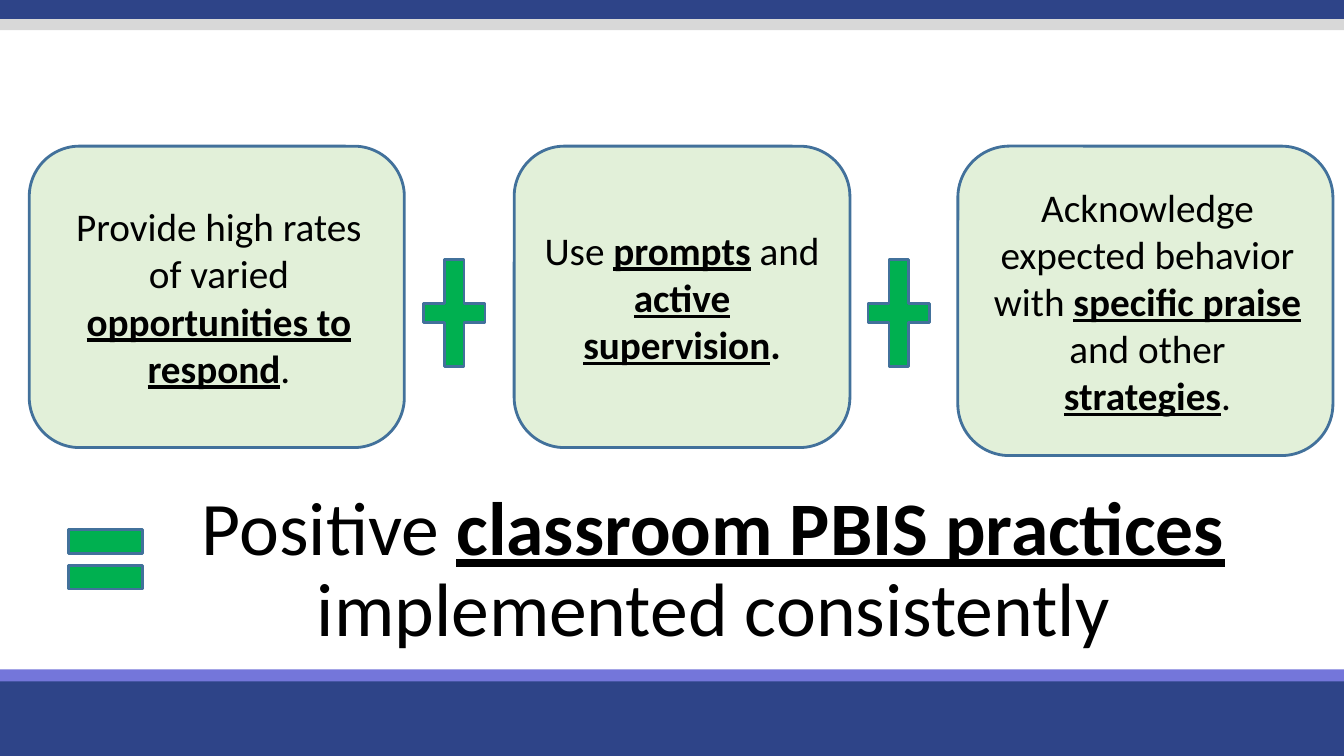
from pptx import Presentation
from pptx.dml.color import RGBColor
from pptx.enum.shapes import MSO_SHAPE
from pptx.enum.text import MSO_ANCHOR, PP_ALIGN
from pptx.util import Inches, Pt

WIDTH, HEIGHT = 13.33, 7.5
NAVY, VIOLET, GREY = "2E4488", "7476DA", "D8D8D8"
PALE_GREEN, GREEN, OUTLINE, BLACK = "E2F0D9", "00B050", "42719B", "000000"
CARD_TOP, CARD_HEIGHT = 1.45, 2.99
PLUS_WIDTH, PLUS_HEIGHT = 0.83, 1.45

PRACTICES = [
    (0.29, 3.72, CARD_HEIGHT, 0.14, [
        ("Provide high rates of varied ", False, False),
        ("opportunities to respond", True, True),
        (".", False, False)]),
    (5.1, 3.33, CARD_HEIGHT, 0.1, [
        ("Use ", False, False),
        ("prompts", True, True),
        (" and ", False, False),
        ("active supervision", True, True),
        (".", True, False)]),
    (9.5, 3.72, 3.07, 0.14, [
        ("Acknowledge expected behavior with ", False, False),
        ("specific praise", True, True),
        (" and other ", False, False),
        ("strategies", True, True),
        (".", False, False)]),
]
CONCLUSION = [
    ("Positive ", False, False),
    ("classroom PBIS practices", True, True),
    (" implemented consistently", False, False),
]


def color(value):
    """Turn a hex string into a colour."""
    return RGBColor.from_string(value)


def add_block(page, kind, box, fill, outline=None):
    """Draw a flat preset shape in the given box."""
    shape = page.shapes.add_shape(kind, *map(Inches, box))
    shape.shadow.inherit = False
    shape.fill.solid()
    shape.fill.fore_color.rgb = color(fill)
    if outline:
        shape.line.color.rgb = color(outline)
        shape.line.width = Pt(2)
    else:
        shape.line.fill.background()
    return shape


def write_text(frame, spans, size, anchor, spacing=None, left=0.1):
    """Write one centred paragraph of (text, bold, underline) spans."""
    frame.word_wrap = True
    frame.vertical_anchor = anchor
    frame.margin_left = Inches(left)
    para = frame.paragraphs[0]
    para.alignment = PP_ALIGN.CENTER
    para.line_spacing = spacing
    for text, bold, underline in spans:
        span = para.add_run()
        span.text = text
        span.font.name = "Calibri"
        span.font.size = Pt(size)
        span.font.bold = bold
        span.font.underline = underline
        span.font.color.rgb = color(BLACK)


def add_bands(page):
    """Draw the full-width bands at the top and bottom of the page."""
    bands = [(6.7, 0.8, NAVY), (6.64, 0.12, VIOLET), (0, 0.19, NAVY), (0.19, 0.11, GREY)]
    for top, height, fill in bands:
        add_block(page, MSO_SHAPE.RECTANGLE, (0, top, WIDTH, height), fill)


def add_practices(page):
    """Draw the practice cards with a plus centred in each gap."""
    for left, width, height, inset, spans in PRACTICES:
        card = add_block(page, MSO_SHAPE.ROUNDED_RECTANGLE,
                         (left, CARD_TOP, width, height), PALE_GREEN, OUTLINE)
        write_text(card.text_frame, spans, 28, MSO_ANCHOR.MIDDLE, left=inset)
    for before, after in zip(PRACTICES, PRACTICES[1:]):
        center = (before[0] + before[1] + after[0]) / 2
        add_block(page, MSO_SHAPE.MATH_PLUS,
                  (center - PLUS_WIDTH / 2 - 0.05, 2.38, PLUS_WIDTH, PLUS_HEIGHT), GREEN, OUTLINE)


def add_conclusion(page, left, top, width, height):
    """Draw the equals sign and the concluding statement."""
    box = page.shapes.add_textbox(*map(Inches, (left, top, width, height)))
    write_text(box.text_frame, CONCLUSION, 54, MSO_ANCHOR.BOTTOM, spacing=0.9)
    add_block(page, MSO_SHAPE.MATH_EQUAL, (left - 0.38, top + 0.47, 1, 1), GREEN, OUTLINE)


def main():
    """Build the slide and save the deck."""
    deck = Presentation()
    deck.slide_width, deck.slide_height = Inches(WIDTH), Inches(HEIGHT)
    page = deck.slides.add_slide(deck.slide_layouts[6])
    add_bands(page)
    add_conclusion(page, 0.93, 4.58, 12.29, 1.95)
    add_practices(page)
    deck.save("out.pptx")


if __name__ == "__main__":
    main()
